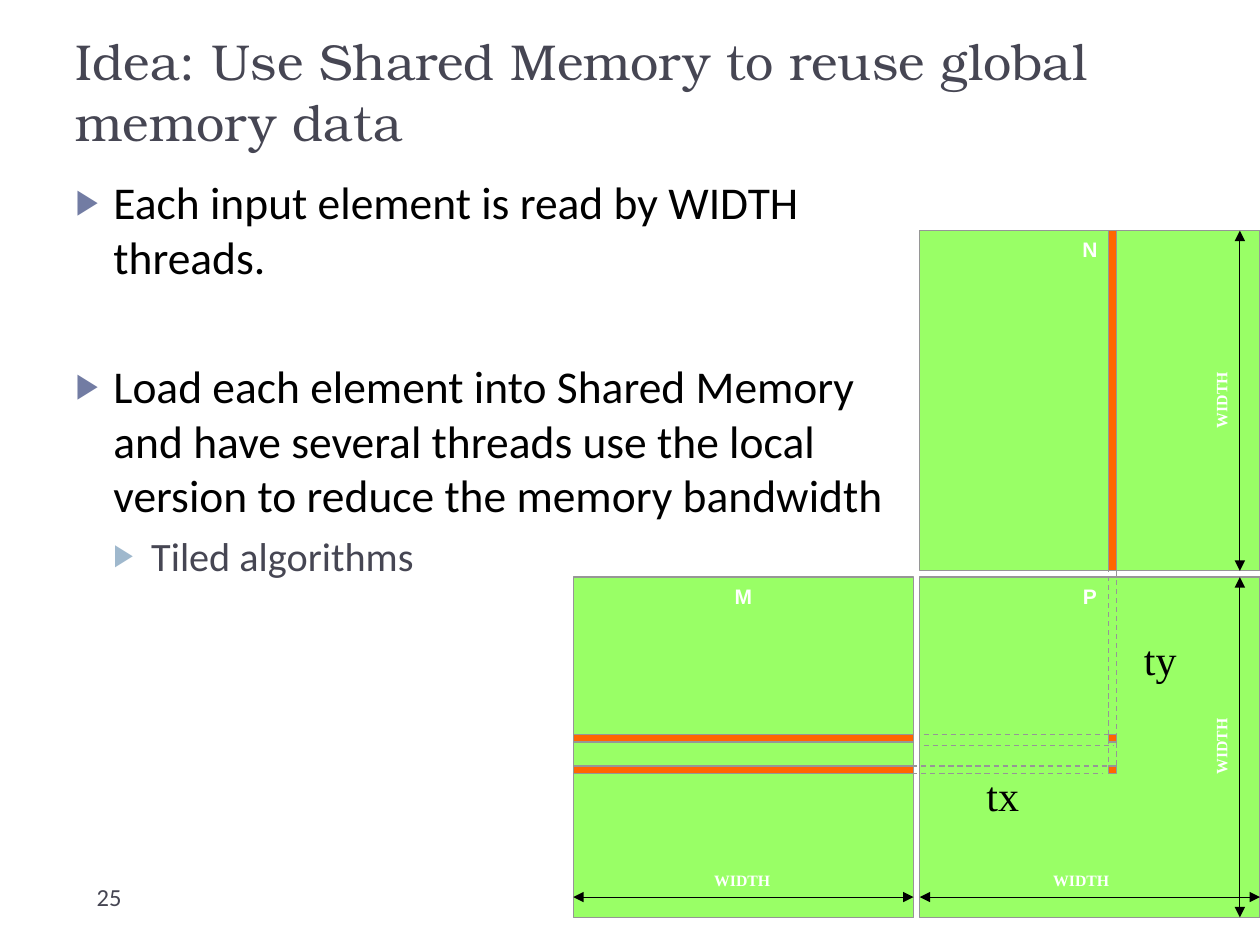
from lxml.etree import SubElement
from pptx import Presentation
from pptx.dml.color import RGBColor
from pptx.enum.dml import MSO_LINE
from pptx.enum.shapes import MSO_CONNECTOR, MSO_SHAPE
from pptx.enum.text import MSO_ANCHOR, MSO_AUTO_SIZE, PP_ALIGN
from pptx.oxml.ns import qn
from pptx.util import Pt

TITLE = "Idea: Use Shared Memory to reuse global memory data"
BULLETS = [
    ("Each input element is read by WIDTH threads.", 0, 6),
    ("Load each element into Shared Memory and have several threads use the local "
     "version to reduce the memory bandwidth", 0, 43),
    ("Tiled algorithms", 1, 5),
]
LEVELS = [
    {"size": 26, "color": "000000", "bullet": "727CA3"},
    {"size": 23, "color": "464653", "bullet": "9FB8CD"},
]
INDENT = 21.6

SIDE, BAND = 194.4, 4.3
LEFT, RIGHT, TOP, BOTTOM = 327.6, 525.6, 131.8, 329.8
COLUMN, ROWS = 633.6, (419.8, 437.8)
ARROW_X, ARROW_Y = 708.5, 512.6

MATRICES = [("M", LEFT, BOTTOM), ("N", RIGHT, TOP), ("P", RIGHT, BOTTOM)]
BANDS = [(COLUMN, TOP, BAND, SIDE)]
for row in ROWS:
    BANDS += [(LEFT, row, SIDE, BAND), (COLUMN, row, BAND, BAND)]
GUIDES = [
    (COLUMN + BAND, 326.2, COLUMN + BAND, 437.8),
    (COLUMN, 324, COLUMN, 435.6),
    (521.3, 437.8, 632.9, 437.8),
    (521.3, 442.1, 630, 442.1),
    (527.8, 426.2, 636.5, 426.2),
    (527.8, 419.8, 636.5, 419.8),
]
ARROWS = [(x + SIDE, ARROW_Y, x, ARROW_Y) for x in (LEFT, RIGHT)]
ARROWS += [(ARROW_X, y + SIDE, ARROW_X, y) for y in (TOP, BOTTOM)]

WIDTH_LABELS = [(677.7, 223.2, 270), (677.7, 421.2, 270), (404.1, 497.5, 0), (597.8, 497.5, 0)]
INDEX_LABELS = [("ty", 645.5, 358.6), ("tx", 555.5, 436.3)]

WIDTH_FONT = {"size": 9, "name": "Times New Roman", "color": "FFFFFF", "bold": True}
INDEX_FONT = {"size": 24, "name": "Times New Roman", "color": "000000"}
MATRIX_FONT = {"size": 12, "name": "Arial", "color": "FFFFFF", "bold": True}
TITLE_FONT = {"size": 28.8, "name": "TeX Gyre Bonum", "color": "464653"}
NUMBER_FONT = {"size": 14, "name": "Calibri", "color": "464653"}


def rgb(value):
    return RGBColor.from_string(value)


def points(values):
    return [Pt(value) for value in values]


def write(paragraph, text, style, align=PP_ALIGN.LEFT):
    paragraph.alignment = align
    font = paragraph.add_run().font
    paragraph.runs[0].text = text
    for key, value in style.items():
        if key == "color":
            font.color.rgb = rgb(value)
        else:
            setattr(font, key, Pt(value) if key == "size" else value)


def place(shape, box):
    for key, value in zip(("left", "top", "width", "height"), points(box)):
        setattr(shape, key, value)


def add_box(slide, box, fill):
    shape = slide.shapes.add_shape(MSO_SHAPE.RECTANGLE, *points(box))
    shape.shadow.inherit = False
    shape.fill.solid()
    shape.fill.fore_color.rgb = rgb(fill)
    shape.line.color.rgb = rgb("969696")
    shape.line.width = Pt(0.75)
    return shape


def add_line(slide, ends, color, width):
    connector = slide.shapes.add_connector(MSO_CONNECTOR.STRAIGHT, *points(ends))
    connector.line.color.rgb = rgb(color)
    connector.line.width = Pt(width)
    SubElement(connector._element.spPr, qn("a:effectLst"))
    return connector.line


def add_label(slide, text, box, style, inset=None, rotation=0):
    shape = slide.shapes.add_textbox(*points(box))
    shape.rotation = rotation
    frame = shape.text_frame
    frame.word_wrap = False
    frame.auto_size = MSO_AUTO_SIZE.SHAPE_TO_FIT_TEXT
    if inset is not None:
        for side in ("left", "top", "right", "bottom"):
            setattr(frame, f"margin_{side}", Pt(inset))
    write(frame.paragraphs[0], text, style, PP_ALIGN.CENTER)


def add_bullet(paragraph, color, level):
    properties = paragraph._p.get_or_add_pPr()
    properties.set("marL", str(Pt(INDENT * (level + 1))))
    properties.set("indent", str(Pt(-INDENT)))
    SubElement(SubElement(properties, qn("a:buClr")), qn("a:srgbClr"), val=color)
    SubElement(properties, qn("a:buSzPct"), val="76000")
    SubElement(properties, qn("a:buChar"), char="▶")


def fill_placeholders(slide):
    title, body = slide.placeholders[0], slide.placeholders[1]
    place(title, (36, 12.2, 648, 77.8))
    place(body, (36, 95.8, 486, 388.8))
    for shape, anchor in ((title, MSO_ANCHOR.BOTTOM), (body, MSO_ANCHOR.TOP)):
        shape.text_frame.auto_size = MSO_AUTO_SIZE.NONE
        shape.text_frame.vertical_anchor = anchor
    write(title.text_frame.paragraphs[0], TITLE, TITLE_FONT)
    frame = body.text_frame
    for index, (text, level, gap) in enumerate(BULLETS):
        paragraph = frame.add_paragraph() if index else frame.paragraphs[0]
        look = LEVELS[level]
        paragraph.level = level
        paragraph.space_before = Pt(gap)
        write(paragraph, text, {"size": look["size"], "name": "Calibri", "color": look["color"]})
        add_bullet(paragraph, look["bullet"], level)


def draw_matrices(slide):
    for name, x, y in MATRICES:
        frame = add_box(slide, (x, y, SIDE, SIDE), "99FF66").text_frame
        frame.vertical_anchor = MSO_ANCHOR.TOP
        write(frame.paragraphs[0], name, MATRIX_FONT, PP_ALIGN.CENTER)
    for ends in GUIDES:
        add_line(slide, ends, "969696", 0.75).dash_style = MSO_LINE.DASH
    for box in BANDS:
        add_box(slide, box, "FF6600")
    for ends in ARROWS:
        outline = add_line(slide, ends, "000000", 0.5)._get_or_add_ln()
        for end in ("a:headEnd", "a:tailEnd"):
            SubElement(outline, qn(end), type="triangle")
    for x, y, rotation in WIDTH_LABELS:
        add_label(slide, "WIDTH", (x, y, 40, 10.8), WIDTH_FONT, 0, rotation)
    for text, x, y in INDEX_LABELS:
        add_label(slide, text, (x, y, 35, 36), INDEX_FONT)


def main():
    presentation = Presentation()
    presentation.slide_width, presentation.slide_height = Pt(720), Pt(540)
    slide = presentation.slides.add_slide(presentation.slide_layouts[1])
    fill_placeholders(slide)
    number = slide.shapes.add_textbox(*points((48.2, 500.4, 156.2, 28.8)))
    number.text_frame.word_wrap = True
    write(number.text_frame.paragraphs[0], "25", NUMBER_FONT)
    draw_matrices(slide)
    presentation.save("out.pptx")


if __name__ == "__main__":
    main()
